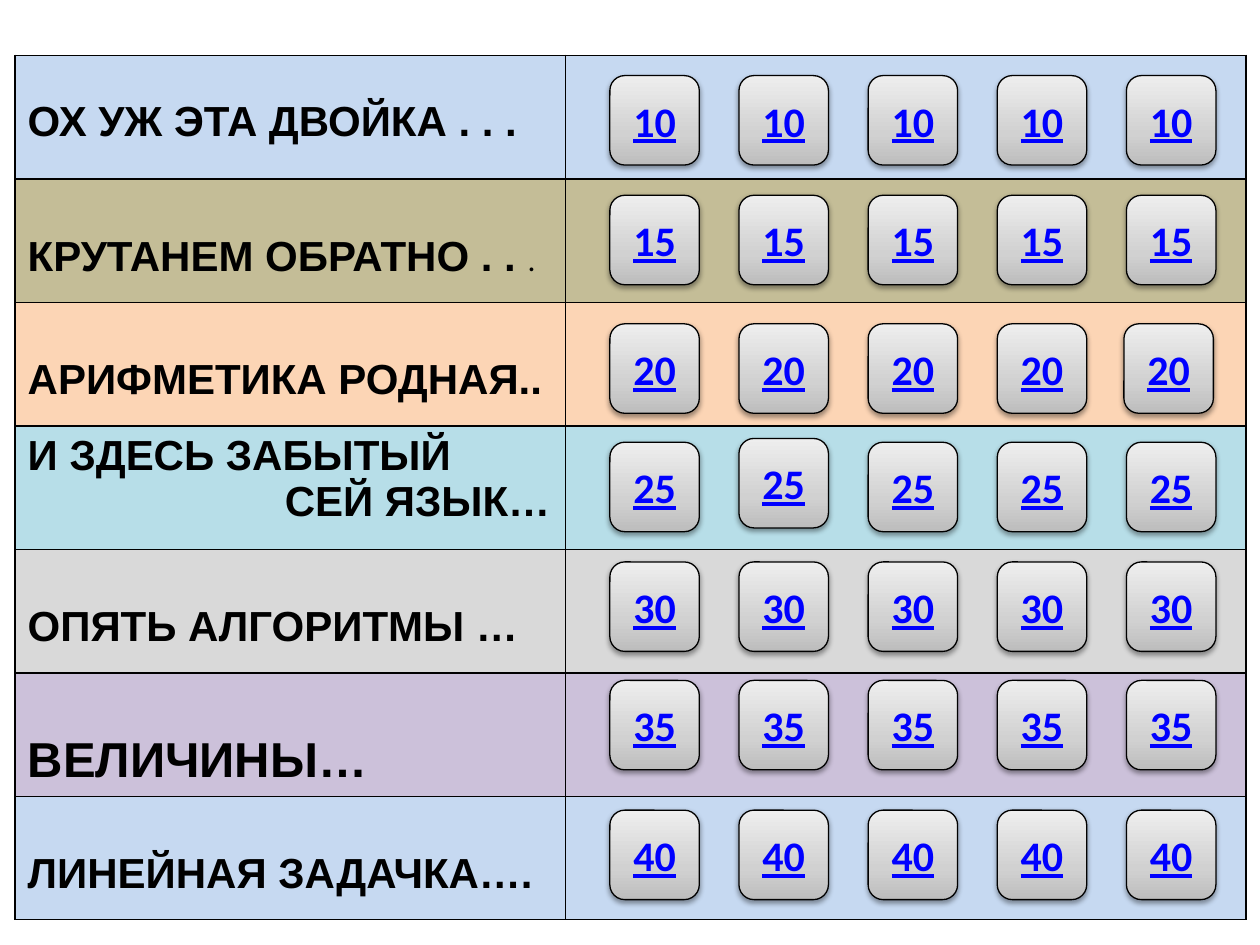
from lxml.etree import SubElement
from pptx import Presentation
from pptx.dml.color import RGBColor
from pptx.enum.shapes import MSO_SHAPE
from pptx.enum.text import MSO_ANCHOR, PP_ALIGN
from pptx.oxml.ns import qn
from pptx.util import Inches, Pt

BLACK = RGBColor(0x00, 0x00, 0x00)
LINK_BLUE = RGBColor(0x00, 0x00, 0xFF)
BLUE = RGBColor(0xC6, 0xD9, 0xF1)
OLIVE = RGBColor(0xC4, 0xBD, 0x97)
PEACH = RGBColor(0xFC, 0xD5, 0xB5)
AQUA = RGBColor(0xB7, 0xDE, 0xE8)
GREY = RGBColor(0xD9, 0xD9, 0xD9)
LILAC = RGBColor(0xCC, 0xC1, 0xDA)
BUTTON_STOPS = [
    (0, RGBColor(0xBD, 0xBD, 0xBD)),
    (35, RGBColor(0xD1, 0xD1, 0xD1)),
    (100, RGBColor(0xEE, 0xEE, 0xEE)),
]

# Category lines, text size, top margin, fill, points, top of the buttons
CATEGORIES = [
    (["ОХ УЖ ЭТА ДВОЙКА . . ."], 24, 0.34, BLUE, 10, 0.6),
    (["КРУТАНЕМ ОБРАТНО . . ."], 24, 0.43, OLIVE, 15, 1.55),
    (["АРИФМЕТИКА РОДНАЯ.."], 24, 0.43, PEACH, 20, 2.57),
    (["И ЗДЕСЬ ЗАБЫТЫЙ", "СЕЙ ЯЗЫК…"], 24, 0.05, AQUA, 25, 3.51),
    (["ОПЯТЬ АЛГОРИТМЫ …"], 24, 0.43, GREY, 30, 4.46),
    (["ВЕЛИЧИНЫ…"], 28, 0.48, LILAC, 35, 5.4),
    (["ЛИНЕЙНАЯ ЗАДАЧКА…."], 24, 0.43, BLUE, 40, 6.43),
]
SMALL_DOT_ROW = 1
SECOND_LINE_INDENT = 2.04

TABLE_LEFT, TABLE_TOP = 0.12, 0.44
COLUMN_WIDTHS = (4.37, 5.4)
ROW_HEIGHT = 0.98
BUTTON_COUNT, BUTTON_SIZE = 5, 0.71
BUTTON_LEFT, BUTTON_STEP = 4.84, 1.025
# (row, column): shift right and down from the grid
BUTTON_SHIFTS = {(2, 4): (-0.02, 0), (3, 1): (0, -0.03)}


def add_color(parent, color, alpha=None):
    element = SubElement(parent, qn("a:srgbClr"), val=str(color))
    if alpha is not None:
        SubElement(element, qn("a:alpha"), val=str(alpha * 1000))


def style_cell(cell, color):
    properties = cell._tc.get_or_add_tcPr()
    for side in ("lnL", "lnR", "lnT", "lnB"):
        border = SubElement(properties, qn(f"a:{side}"), w=str(Pt(1)))
        add_color(SubElement(border, qn("a:solidFill")), BLACK)
    cell.fill.solid()
    cell.fill.fore_color.rgb = color


def write_category(cell, lines, size, top_margin):
    cell.margin_top = Inches(top_margin)
    cell.margin_bottom = 0
    frame = cell.text_frame
    for index, line in enumerate(lines):
        paragraph = frame.paragraphs[0] if index == 0 else frame.add_paragraph()
        if index:
            paragraph._p.get_or_add_pPr().set("marL", str(Inches(SECOND_LINE_INDENT)))
        paragraph.font.size = Pt(size)
        paragraph.font.name = "Arial"
        paragraph.font.bold = True
        paragraph.font.color.rgb = BLACK
        paragraph.add_run().text = line


def shrink_last_dot(paragraph):
    run = paragraph.runs[0]
    run.text = run.text[:-1]
    dot = paragraph.add_run()
    dot.text = "."
    dot.font.size = Pt(18)
    dot.font.name = "Calibri"
    dot.font.bold = False


def add_button(slide, left, top, points):
    button = slide.shapes.add_shape(
        MSO_SHAPE.ROUNDED_RECTANGLE,
        Inches(left), Inches(top), Inches(BUTTON_SIZE), Inches(BUTTON_SIZE))
    button.fill.gradient()
    button.fill.gradient_angle = 90
    button.line.color.rgb = BLACK
    button.line.width = Pt(0.75)
    button.shadow.inherit = False

    properties = button._element.spPr
    stops = properties.find(".//" + qn("a:gsLst"))
    for stop in list(stops):
        stops.remove(stop)
    for position, color in BUTTON_STOPS:
        add_color(SubElement(stops, qn("a:gs"), pos=str(position * 1000)), color)
    shadow = SubElement(
        properties.find(qn("a:effectLst")), qn("a:outerShdw"),
        blurRad=str(Pt(3.1)), dist=str(Pt(1.6)), dir=str(90 * 60000), rotWithShape="0")
    add_color(shadow, BLACK, alpha=38)

    frame = button.text_frame
    frame.vertical_anchor = MSO_ANCHOR.MIDDLE
    paragraph = frame.paragraphs[0]
    paragraph.alignment = PP_ALIGN.CENTER
    run = paragraph.add_run()
    run.text = str(points)
    run.font.size = Pt(24)
    run.font.name = "Calibri"
    run.font.bold = True
    run.font.underline = True
    run.font.color.rgb = LINK_BLUE


def main():
    presentation = Presentation()
    presentation.slide_width, presentation.slide_height = Inches(10), Inches(7.5)
    slide = presentation.slides.add_slide(presentation.slide_layouts[6])

    table = slide.shapes.add_table(
        len(CATEGORIES), len(COLUMN_WIDTHS), Inches(TABLE_LEFT), Inches(TABLE_TOP),
        Inches(sum(COLUMN_WIDTHS)), Inches(ROW_HEIGHT * len(CATEGORIES))).table
    for column, width in zip(table.columns, COLUMN_WIDTHS):
        column.width = Inches(width)

    for row, (lines, size, top_margin, color, points, button_top) in enumerate(CATEGORIES):
        table.rows[row].height = Inches(ROW_HEIGHT)
        for cell in table.rows[row].cells:
            style_cell(cell, color)
        category_cell = table.cell(row, 0)
        write_category(category_cell, lines, size, top_margin)
        if row == SMALL_DOT_ROW:
            shrink_last_dot(category_cell.text_frame.paragraphs[0])
        for column in range(BUTTON_COUNT):
            right, down = BUTTON_SHIFTS.get((row, column), (0, 0))
            add_button(slide, BUTTON_LEFT + column * BUTTON_STEP + right,
                       button_top + down, points)

    presentation.save("out.pptx")


if __name__ == "__main__":
    main()
